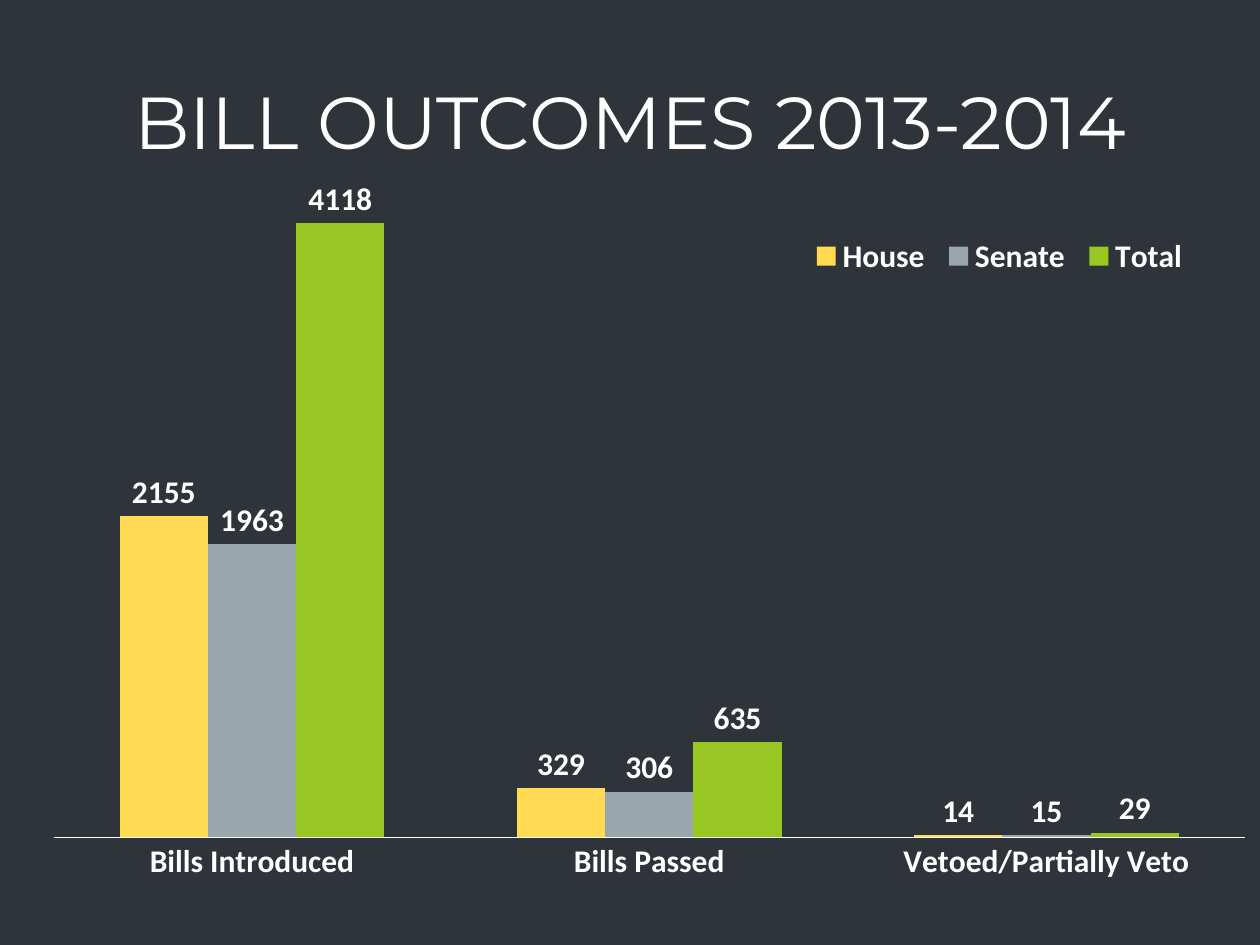
import pptx
import pptx.chart.data
import pptx.dml.color
import pptx.enum.chart
import pptx.enum.text
import pptx.oxml
import pptx.oxml.ns
import pptx.util
from dataclasses import dataclass

Inches = pptx.util.Inches
qn = pptx.oxml.ns.qn

# Content
TITLE = "BILL OUTCOMES 2013-2014"
OUTCOMES = ["Bills Introduced", "Bills Passed", "Vetoed/Partially Veto"]
BILLS = {
    "House": [2155, 329, 14],
    "Senate": [1963, 306, 15],
    "Total": [4118, 635, 29],
}


@dataclass(frozen=True)
class Theme:
    background: str = "2E343A"
    text: str = "FFFFFF"
    series: tuple = ("FFDA52", "99A6AE", "98C723")
    title_font: str = "Montserrat"
    chart_font: str = "Calibri"
    title_size: int = 42
    chart_size: int = 18


THEME = Theme()
TITLE_BOX = (0, 0.33, 10, 1.25)
CHART_BOX = (0.23, -0.33, 9.75, 7.5)
# Fractions of the chart: left, top, width, height
PLOT_AREA = (0.02, 0.22, 0.97, 0.71)
LEGEND_AREA = (0.63, 0.29, 0.32, 0.05)


def rgb(value):
    return pptx.dml.color.RGBColor.from_string(value)


def style_font(font, name, size, bold):
    font.name = name
    font.size = pptx.util.Pt(size)
    font.bold = bold
    font.color.rgb = rgb(THEME.text)


def style_chart_font(font):
    style_font(font, THEME.chart_font, THEME.chart_size, True)


def set_layout(parent, index, area, inner=False):
    """Give a chart part a fixed place inside the chart."""
    for old in parent.findall(qn("c:layout")):
        parent.remove(old)
    target = '<c:layoutTarget val="inner"/>' if inner else ""
    modes = '<c:xMode val="edge"/><c:yMode val="edge"/>'
    sizes = "".join(f'<c:{key} val="{part}"/>' for key, part in zip("xywh", area))
    parent.insert(index, pptx.oxml.parse_xml(
        f'<c:layout {pptx.oxml.ns.nsdecls("c")}><c:manualLayout>'
        f'{target}{modes}{sizes}</c:manualLayout></c:layout>'))


def add_bill_chart(page):
    data = pptx.chart.data.CategoryChartData()
    data.categories = OUTCOMES
    for name, values in BILLS.items():
        data.add_series(name, values)
    chart = page.shapes.add_chart(
        pptx.enum.chart.XL_CHART_TYPE.COLUMN_CLUSTERED,
        *map(Inches, CHART_BOX), data).chart
    chart.has_title = False
    style_chart_font(chart.font)

    # Columns and their values
    plot = chart.plots[0]
    plot.gap_width = 150
    plot.overlap = 0
    plot.vary_by_categories = False
    for series, color in zip(plot.series, THEME.series):
        series.format.fill.solid()
        series.format.fill.fore_color.rgb = rgb(color)
        labels = series.data_labels
        labels.show_value = True
        labels.position = pptx.enum.chart.XL_LABEL_POSITION.OUTSIDE_END
        style_chart_font(labels.font)

    # Axes
    axis = chart.category_axis
    axis.major_tick_mark = pptx.enum.chart.XL_TICK_MARK.NONE
    axis.format.line.color.rgb = rgb(THEME.text)
    axis.format.line.width = pptx.util.Pt(0.75)
    style_chart_font(axis.tick_labels.font)
    scale = chart.value_axis
    scale.minimum_scale, scale.maximum_scale = 0, 4500
    scale.has_major_gridlines = False
    scale.visible = False

    # Legend and placing
    chart.has_legend = True
    chart.legend.position = pptx.enum.chart.XL_LEGEND_POSITION.TOP
    chart.legend.include_in_layout = False
    style_chart_font(chart.legend.font)
    space = chart.element
    set_layout(space.find(".//" + qn("c:plotArea")), 0, PLOT_AREA, inner=True)
    set_layout(space.find(".//" + qn("c:legend")), 1, LEGEND_AREA)


def add_title(page):
    box = page.shapes.title
    box.left, box.top, box.width, box.height = map(Inches, TITLE_BOX)
    frame = box.text_frame
    frame.word_wrap = True
    frame.vertical_anchor = pptx.enum.text.MSO_ANCHOR.MIDDLE
    para = frame.paragraphs[0]
    para.alignment = pptx.enum.text.PP_ALIGN.CENTER
    span = para.add_run()
    span.text = TITLE
    style_font(span.font, THEME.title_font, THEME.title_size, False)


def main():
    deck = pptx.Presentation()
    deck.slide_width, deck.slide_height = Inches(10), Inches(7.5)
    page = deck.slides.add_slide(deck.slide_layouts[5])
    page.background.fill.solid()
    page.background.fill.fore_color.rgb = rgb(THEME.background)
    add_title(page)
    add_bill_chart(page)
    deck.save("out.pptx")


if __name__ == "__main__":
    main()
